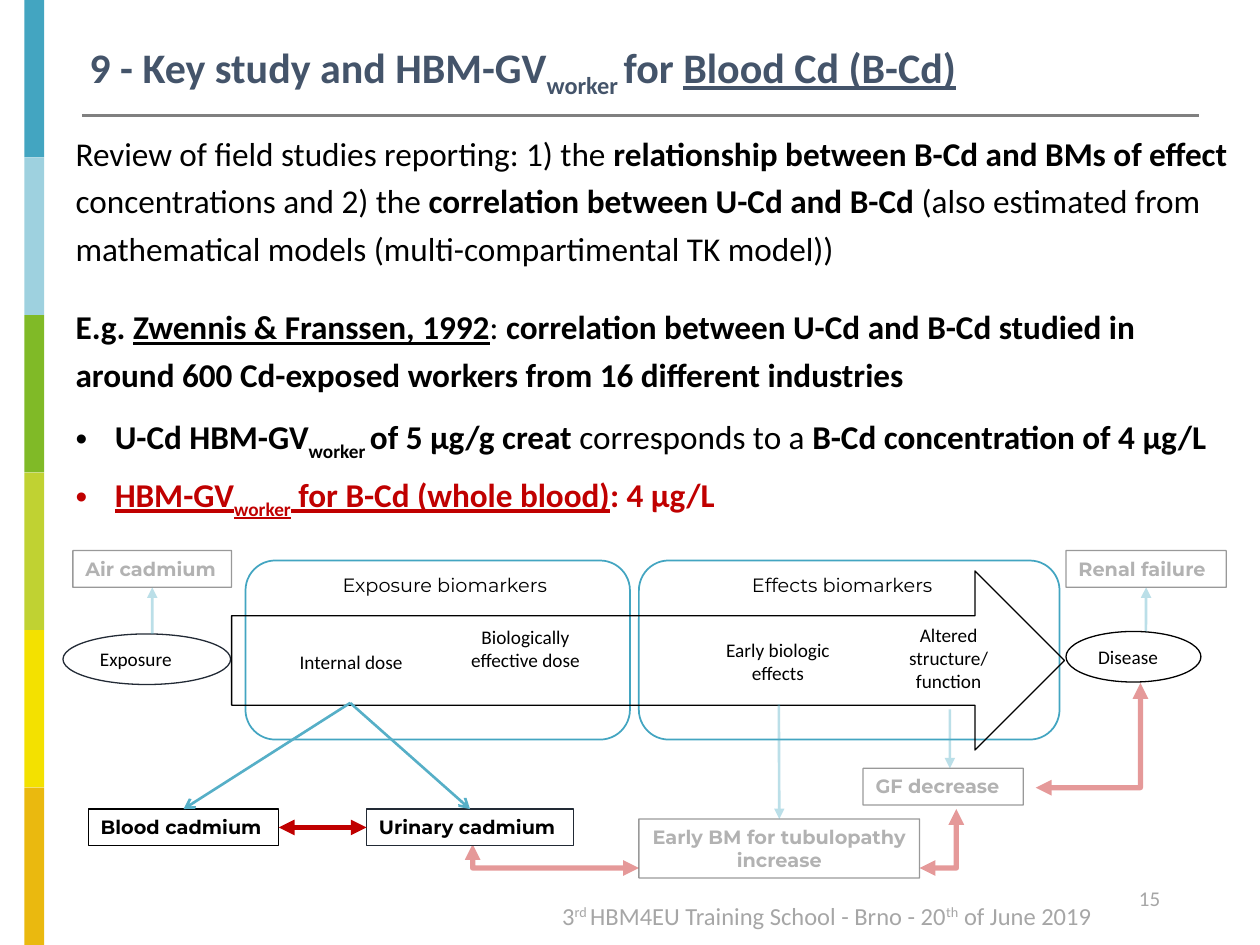
"""Build the slide on the key study and guidance value for blood cadmium."""
import pptx
import pptx.dml.color
import pptx.enum.shapes
import pptx.enum.text
import pptx.oxml.ns
import pptx.util
from lxml import etree

Cm, Pt = pptx.util.Cm, pptx.util.Pt
RGB = pptx.dml.color.RGBColor
KIND = pptx.enum.shapes.MSO_SHAPE
LINK = pptx.enum.shapes.MSO_CONNECTOR
ALIGN = pptx.enum.text.PP_ALIGN
ANCHOR = pptx.enum.text.MSO_ANCHOR
qn = pptx.oxml.ns.qn

BLACK, WHITE = RGB(0, 0, 0), RGB(255, 255, 255)
NAVY, SLATE = RGB(0x22, 0x2A, 0x35), RGB(0x44, 0x54, 0x6A)
RED, TEAL, SKY = RGB(0xC0, 0, 0), RGB(0x43, 0xA5, 0xC1), RGB(0x56, 0xAF, 0xC7)
RULE, PALE, FAINT = RGB(0x80, 0x80, 0x80), RGB(0xA6, 0xA6, 0xA6), RGB(0xB2, 0xB2, 0xB2)
BANDS = [TEAL, RGB(0x9E, 0xD1, 0xDF), RGB(0x80, 0xBA, 0x27),
         RGB(0xC0, 0xD2, 0x32), RGB(0xF3, 0xE1, 0), RGB(0xEA, 0xB9, 0x0F)]
FADE = 40


class Deck:
    """Hold the style and the current slide."""

    sans, head = "Calibri", "Montserrat"

    def __init__(self):
        self.prs = pptx.Presentation()
        self.prs.slide_width, self.prs.slide_height = Cm(25.4), Cm(19.05)
        self.slide = self.prs.slides.add_slide(self.prs.slide_layouts[1])

    def place(self, shape, box):
        shape.left, shape.top, shape.width, shape.height = map(Cm, box)

    def frame(self, shape, anchor=ANCHOR.TOP):
        frame = shape.text_frame
        frame.word_wrap, frame.vertical_anchor = True, anchor
        frame.auto_size = pptx.enum.text.MSO_AUTO_SIZE.NONE
        return frame

    def runs(self, para, parts, size, color, font=None):
        """Add runs; flags are b bold, u underline, - sub, + super, r red."""
        for text, flags in parts:
            run = para.add_run()
            run.text = text
            face = run.font
            face.name, face.size = font or self.sans, Pt(size)
            face.bold, face.underline = "b" in flags, "u" in flags
            face.color.rgb = RED if "r" in flags else color
            for mark, base in (("-", "-25000"), ("+", "30000")):
                if mark in flags:
                    run._r.get_or_add_rPr().set("baseline", base)

    def title(self, box, parts):
        shape = self.slide.shapes.title
        self.place(shape, box)
        para = self.frame(shape).paragraphs[0]
        para.alignment = ALIGN.LEFT
        self.runs(para, parts, 24, SLATE)

    def body(self, box, items):
        shape = self.slide.placeholders[1]
        self.place(shape, box)
        frame = self.frame(shape)
        for i, (bullet, before, after, parts) in enumerate(items):
            para = frame.add_paragraph() if i else frame.paragraphs[0]
            props = para._p.get_or_add_pPr()
            inset = Cm(0.79) if bullet else 0
            props.set("marL", str(inset))
            props.set("indent", str(-inset))
            if bullet:
                etree.SubElement(props, qn("a:buChar")).set("char", "•")
            else:
                etree.SubElement(props, qn("a:buNone"))
            para.line_spacing = Pt(27)
            para.space_before, para.space_after = Pt(before), Pt(after)
            self.runs(para, parts, 19, BLACK)

    def text(self, box, parts, size, align=ALIGN.LEFT):
        shape = self.slide.shapes.add_textbox(*map(Cm, box))
        para = self.frame(shape).paragraphs[0]
        para.alignment = align
        self.runs(para, parts, size, PALE)

    def fade(self, shape, alpha):
        if alpha:
            color = shape.line._ln.find(".//" + qn("a:srgbClr"))
            etree.SubElement(color, qn("a:alpha")).set("val", str(alpha * 1000))

    def shape(self, kind, box, fill=WHITE, line=None, width=0.75, alpha=None):
        shape = self.slide.shapes.add_shape(kind, *map(Cm, box))
        shape.shadow.inherit = False
        if fill is None:
            shape.fill.background()
        else:
            shape.fill.solid()
            shape.fill.fore_color.rgb = fill
        if line is None:
            shape.line.fill.background()
        else:
            shape.line.color.rgb, shape.line.width = line, Pt(width)
            self.fade(shape, alpha)
        return shape

    def label(self, kind, box, text, flags="", color=BLACK, font=None,
              align=ALIGN.CENTER, anchor=ANCHOR.TOP, **look):
        shape = self.shape(kind, box, **look)
        para = self.frame(shape, anchor).paragraphs[0]
        para.alignment = align
        self.runs(para, [(text, flags)], 11, color, font)
        return shape

    def marker(self, box, text, faint=False, align=ALIGN.LEFT, fill=WHITE, line=BLACK):
        return self.label(KIND.RECTANGLE, box, text, "b", FAINT if faint else BLACK,
                          self.head, align, fill=fill, line=line,
                          alpha=FADE if faint else None)

    def link(self, start, end, color, width, alpha=None, head=None, tail=None,
             bent=False, begin=None, stop=None):
        kind = LINK.ELBOW if bent else LINK.STRAIGHT
        line = self.slide.shapes.add_connector(kind, *map(Cm, start + end))
        if bent:
            line._element.spPr.find(qn("a:prstGeom")).set("prst", "bentConnector2")
        if begin:
            line.begin_connect(*begin)
        if stop:
            line.end_connect(*stop)
        line.line.color.rgb, line.line.width = color, Pt(width)
        self.fade(line, alpha)
        for tag, tip in (("a:headEnd", head), ("a:tailEnd", tail)):
            if tip:
                etree.SubElement(line.line._ln, qn(tag)).set("type", tip)
        etree.SubElement(line._element.spPr, qn("a:effectLst"))


def main():
    deck = Deck()
    step = 19.05 / len(BANDS)
    for i, color in enumerate(BANDS):
        deck.shape(KIND.RECTANGLE, (0.49, i * step, 0.4, step), color)
    deck.link((1.65, 2.33), (24.18, 2.33), RULE, 2)
    deck.text((22.71, 17.73, 1.4, 1.02), [("15", "")], 12)
    deck.text((10.06, 18.03, 12.19, 0.86),
              [("3", ""), ("rd ", "+"), ("HBM4EU Training School - Brno - 20", ""),
               ("th", "+"), (" of June 2019", "")], 14, ALIGN.RIGHT)
    deck.title((1.55, 0.71, 20.7, 1.27),
               [("9 - Key study and HBM-GV", "b"), ("worker ", "b-"),
                ("for ", "b"), ("Blood Cd (B-Cd)", "bu")])

    for start, end in (((12.88, 17.5), (9.53, 17.02)),
                       ((18.54, 17.5), (19.28, 16.31)),
                       ((20.88, 15.88), (22.99, 13.77))):
        deck.link(start, end, RED, 3, FADE, "triangle", "triangle", bent=True)

    for left, width in ((4.95, 7.75), (12.88, 8.48)):
        deck.shape(KIND.ROUNDED_RECTANGLE, (left, 11.3, width, 3.61), line=TEAL, width=1)
    for left, width, text in ((6.43, 5.08, "Exposure biomarkers"),
                              (14.68, 4.6, "Effects biomarkers")):
        deck.label(KIND.RECTANGLE, (left, 11.43, width, 0.74), text, font=deck.head)
    deck.label(KIND.RECTANGLE, (5.16, 12.5, 3.84, 1.68), "Internal dose",
               anchor=ANCHOR.MIDDLE)
    deck.label(KIND.OVAL, (8.69, 12.14, 3.81, 2.34), "Biologically effective dose")
    deck.label(KIND.OVAL, (13.08, 12.5, 5.21, 1.68), "Early biologic effects")
    for box, text, line in (((1.27, 12.78, 3.38, 1.02), "Exposure", NAVY),
                            ((21.49, 12.73, 2.72, 1.02), "Disease", BLACK)):
        deck.label(KIND.OVAL, box, text, align=ALIGN.LEFT, line=line)
    deck.shape(KIND.RIGHT_ARROW, (4.67, 11.51, 16.79, 3.61), None, BLACK)
    deck.label(KIND.OVAL, (17.04, 12.09, 4.17, 2.34), "Altered structure/ function",
               fill=None)

    early = deck.marker((12.88, 16.51, 5.66, 1.19), "Early BM for tubulopathy increase",
                        True, ALIGN.CENTER)
    deck.marker((17.4, 15.49, 3.23, 0.74), "GF decrease", True)
    air = deck.marker((1.47, 11.1, 3.2, 0.74), "Air cadmium", True)
    renal = deck.marker((21.49, 11.1, 3.23, 0.74), "Renal failure", True, fill=None)
    urine = deck.marker((7.39, 16.31, 4.17, 0.74), "Urinary cadmium", line=NAVY)
    blood = deck.marker((1.78, 16.31, 3.84, 0.74), "Blood cadmium")

    for start, end, stop in (((15.7, 14.2), (15.71, 16.51), (early, 0)),
                             ((3.07, 12.78), (3.07, 11.84), (air, 2)),
                             ((19.15, 14.3), (19.15, 15.49), None),
                             ((23.1, 12.73), (23.1, 11.84), (renal, 2))):
        deck.link(start, end, SKY, 1.5, FADE, tail="triangle", stop=stop)
    for end, goal in (((9.47, 16.31), urine), ((3.7, 16.31), blood)):
        deck.link((7.06, 14.17), end, SKY, 1.5, tail="arrow", stop=(goal, 0))
    deck.link((7.39, 16.68), (5.62, 16.68), RED, 3, head="triangle", tail="triangle",
              begin=(urine, 1), stop=(blood, 3))

    deck.body((1.27, 2.41, 23.83, 8.28), [
        (False, 0, 12, [
            ("Review of field studies reporting: 1) the ", ""),
            ("relationship between B-Cd and BMs of effect ", "b"),
            ("concentrations and 2) the ", ""),
            ("correlation between U-Cd and B-Cd ", "b"),
            ("(also estimated from mathematical models "
             "(multi-compartimental TK model))", "")]),
        (False, 6, 6, [
            ("E.g. ", "b"), ("Zwennis & Franssen, 1992", "bu"), (": ", ""),
            ("correlation between U-Cd and B-Cd studied in around 600 "
             "Cd-exposed workers from 16 different industries", "b")]),
        (True, 6, 6, [
            ("U-Cd HBM-GV", "b"), ("worker ", "b-"), ("of 5 µg/g creat ", "b"),
            ("corresponds to a ", ""), ("B-Cd concentration of 4 µg/L", "b")]),
        (True, 0, 6, [
            ("HBM-GV", "bur"), ("worker", "bur-"),
            (" for B-Cd (whole blood)", "bur"), (": 4 µg/L", "br")])])
    deck.prs.save("out.pptx")


if __name__ == "__main__":
    main()
